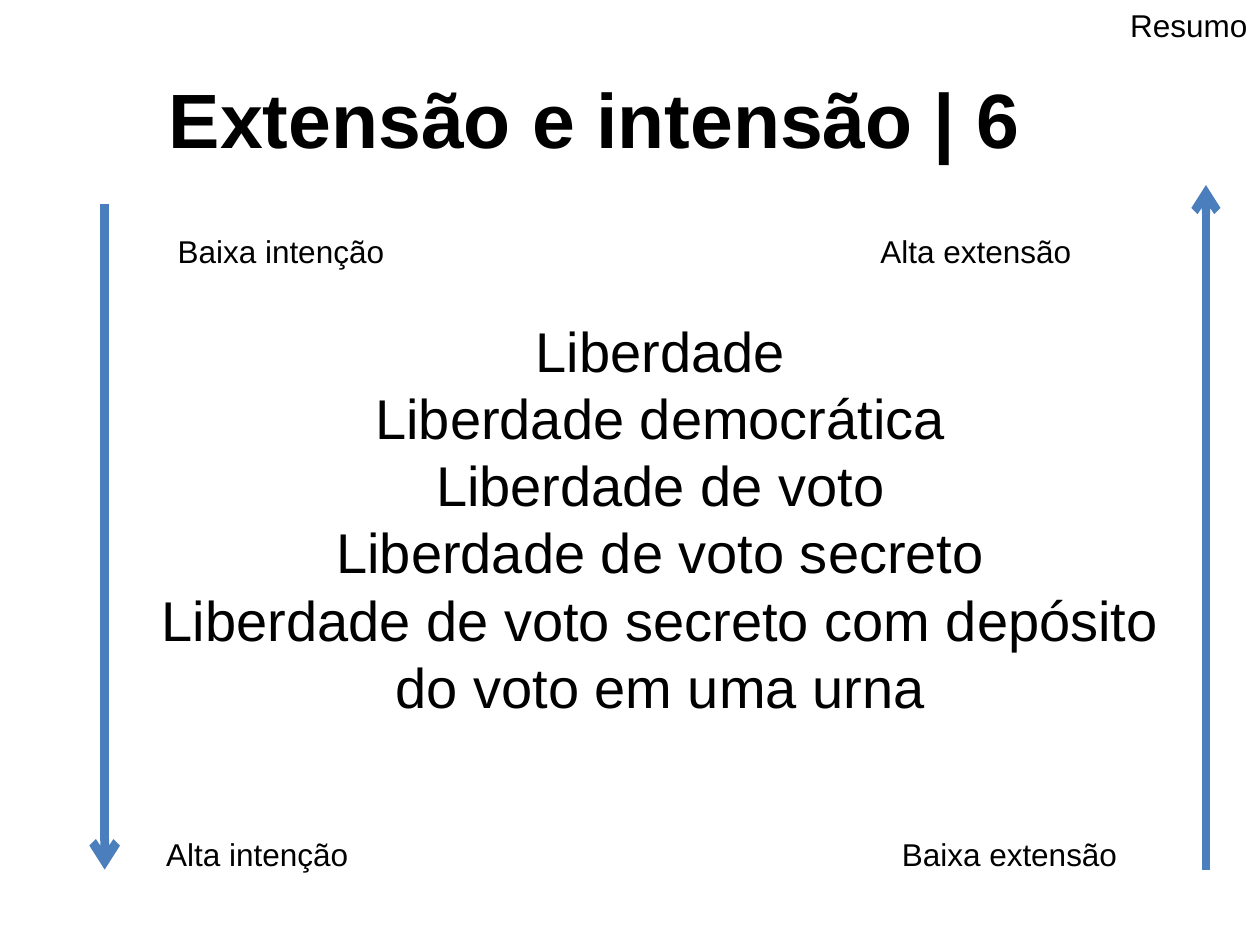
"""Build the slide on extension and intension."""
from lxml import etree
from pptx import Presentation
from pptx.dml.color import RGBColor
from pptx.enum.shapes import MSO_CONNECTOR
from pptx.enum.text import MSO_ANCHOR, MSO_AUTO_SIZE, PP_ALIGN
from pptx.oxml.ns import qn
from pptx.util import Cm, Pt

LEFT, MID, RIGHT = PP_ALIGN.LEFT, PP_ALIGN.CENTER, PP_ALIGN.RIGHT
FIXED, MIDDLE = MSO_AUTO_SIZE.NONE, MSO_ANCHOR.MIDDLE
LINE = MSO_CONNECTOR.STRAIGHT
FONT, BLACK, BLUE = "Arial", "000000", "4B7EBC"

TITLE = "Extensão e intensão | 6"
TERMS = [
    "Liberdade",
    "Liberdade democrática",
    "Liberdade de voto",
    "Liberdade de voto secreto",
    "Liberdade de voto secreto com depósito do voto em uma urna",
]
TOP, LOW = 4.55, 16.71
LABELS = [
    ("Alta intenção", 3.1, LOW, 4.39),
    ("Baixa intenção", 3.33, TOP, 5.18),
    ("Alta extensão", 17.5, TOP, 5.18),
    ("Baixa extensão", 17.93, LOW, 5.18),
]
ARROWS = [
    (2.11, 4.11, 17.53, 5),
    (24.31, 17.53, 3.73, 4.75),
]


def color(code):
    return RGBColor.from_string(code)


def place(shape, x, y, w, h):
    shape.left, shape.top, shape.width, shape.height = map(Cm, (x, y, w, h))


def write(shape, text, size=18, bold=False, align=LEFT):
    frame = shape.text_frame
    frame.word_wrap = True
    frame.auto_size = FIXED
    par = frame.paragraphs[0]
    par.text = text.replace("\n", "\v")
    par.alignment = align
    for run in par.runs:
        font = run.font
        font.name, font.size, font.bold = FONT, Pt(size), bold
        font.color.rgb = color(BLACK)
    return par


def label(slide, text, x, y, w, align=LEFT):
    box = slide.shapes.add_textbox(Cm(x), Cm(y), Cm(w), Cm(1.02))
    write(box, text, align=align)


def arrow(slide, x, start, end, width):
    line = slide.shapes.add_connector(LINE, Cm(x), Cm(start), Cm(x), Cm(end))
    line.line.color.rgb = color(BLUE)
    line.line.width = Pt(width)
    etree.SubElement(line.line._get_or_add_ln(), qn("a:tailEnd"), type="arrow")
    etree.SubElement(line._element.spPr, qn("a:effectLst"))


def main():
    deck = Presentation()
    deck.slide_width, deck.slide_height = Cm(25.4), Cm(19.05)
    slide = deck.slides.add_slide(deck.slide_layouts[1])
    title, body = slide.placeholders

    place(title, 1, 0.79, 22.86, 3.18)
    write(title, TITLE, size=44, bold=True, align=MID)
    title.text_frame.vertical_anchor = MIDDLE
    title.text_frame.margin_right = Cm(1.12)

    place(body, 1.4, 6.25, 22.86, 10.52)
    par = write(body, "\n".join(TERMS), size=32, align=MID)
    par.line_spacing = Pt(38.4)
    props = par._p.get_or_add_pPr()
    props.set("marL", str(Cm(0.97)))
    props.set("indent", "0")
    etree.SubElement(props, qn("a:buNone"))

    for spot in ARROWS:
        arrow(slide, *spot)
    for spot in LABELS:
        label(slide, *spot)
    label(slide, "Resumo", 22.33, 0, 3.07, align=RIGHT)
    deck.save("out.pptx")


if __name__ == "__main__":
    main()
